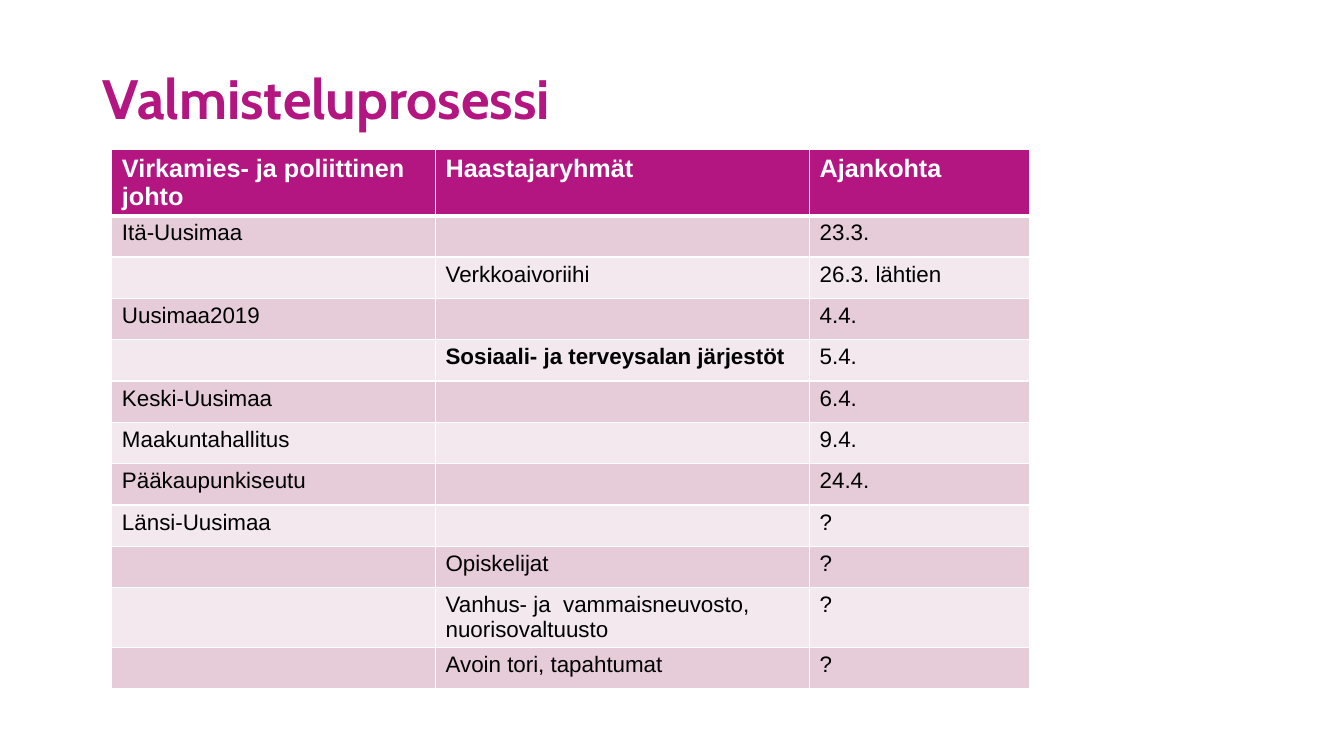
import pptx
import pptx.util
import pptx.dml.color
import pptx.enum.text
import pptx.oxml
import pptx.oxml.ns

SLIDE_SIZE = (13.33, 7.5)
TITLE = "Valmisteluprosessi"
TITLE_BOX = (0.92, 0.63, 10.5, 0.76)
HEADER = ("Virkamies- ja poliittinen johto", "Haastajaryhmät", "Ajankohta")
SCHEDULE = [
    ("Itä-Uusimaa", "", "23.3."),
    ("", "Verkkoaivoriihi", "26.3. lähtien"),
    ("Uusimaa2019", "", "4.4."),
    ("", "Sosiaali- ja terveysalan järjestöt", "5.4."),
    ("Keski-Uusimaa", "", "6.4."),
    ("Maakuntahallitus", "", "9.4."),
    ("Pääkaupunkiseutu", "", "24.4."),
    ("Länsi-Uusimaa", "", "?"),
    ("", "Opiskelijat", "?"),
    ("", "Vanhus- ja  vammaisneuvosto, nuorisovaltuusto", "?"),
    ("", "Avoin tori, tapahtumat", "?"),
]
BOLD_TEXTS = {"Sosiaali- ja terveysalan järjestöt"}
TABLE_LEFT, TABLE_TOP = 1.11, 1.48
COLUMN_WIDTHS = (3.21, 3.71, 2.18)
ROW_HEIGHT = 0.41

MAGENTA, WHITE, BLACK = "B31681", "FFFFFF", "000000"
BANDS = ("E5CCD8", "F2E8ED")
TITLE_FONT = {"name": "Cabin", "size": pptx.util.Pt(39.6), "bold": True}
HEADER_FONT = {"name": "Arial", "size": pptx.util.Pt(18), "bold": True}
BODY_FONT = {"name": "Arial", "size": pptx.util.Pt(16), "bold": False}


def color(hex_string):
    return pptx.dml.color.RGBColor.from_string(hex_string)


def format_font(font, values, hex_string):
    for name, value in values.items():
        setattr(font, name, value)
    font.color.rgb = color(hex_string)


def add_borders(cell, bottom_width, top_width):
    """Draw white lines, with widths in points, on all four sides of a cell."""
    properties = cell._tc.get_or_add_tcPr()
    for side, width in (("L", 1), ("R", 1), ("T", top_width), ("B", bottom_width)):
        properties.append(pptx.oxml.parse_xml(
            f'<a:ln{side} {pptx.oxml.ns.nsdecls("a")} w="{pptx.util.Pt(width)}">'
            f'<a:solidFill><a:srgbClr val="{WHITE}"/></a:solidFill></a:ln{side}>'))


def add_title(slide):
    title = slide.shapes.title
    for name, value in zip(("left", "top", "width", "height"), TITLE_BOX):
        setattr(title, name, pptx.util.Inches(value))
    frame = title.text_frame
    frame.text = TITLE
    frame.auto_size = pptx.enum.text.MSO_AUTO_SIZE.NONE
    frame.vertical_anchor = pptx.enum.text.MSO_ANCHOR.MIDDLE
    paragraph = frame.paragraphs[0]
    paragraph.alignment = pptx.enum.text.PP_ALIGN.LEFT
    paragraph.line_spacing = 0.9
    format_font(paragraph.runs[0].font, TITLE_FONT, MAGENTA)


def add_schedule(slide):
    rows = [HEADER, *SCHEDULE]
    box = (TABLE_LEFT, TABLE_TOP, sum(COLUMN_WIDTHS), ROW_HEIGHT * len(rows))
    table = slide.shapes.add_table(
        len(rows), len(HEADER), *map(pptx.util.Inches, box)).table
    for column, width in zip(table.columns, COLUMN_WIDTHS):
        column.width = pptx.util.Inches(width)
    for row_index, texts in enumerate(rows):
        table.rows[row_index].height = pptx.util.Inches(ROW_HEIGHT)
        is_header = row_index == 0
        fill = MAGENTA if is_header else BANDS[(row_index - 1) % 2]
        for column_index, text in enumerate(texts):
            cell = table.cell(row_index, column_index)
            add_borders(cell, 3 if is_header else 1, 3 if row_index == 1 else 1)
            cell.fill.solid()
            cell.fill.fore_color.rgb = color(fill)
            if text:
                cell.text = text
                font = cell.text_frame.paragraphs[0].runs[0].font
                format_font(font, HEADER_FONT if is_header else BODY_FONT,
                            WHITE if is_header else BLACK)
                font.bold = is_header or text in BOLD_TEXTS


def main():
    presentation = pptx.Presentation()
    presentation.slide_width, presentation.slide_height = map(
        pptx.util.Inches, SLIDE_SIZE)
    slide = presentation.slides.add_slide(presentation.slide_layouts[5])
    add_title(slide)
    add_schedule(slide)
    presentation.save("out.pptx")


if __name__ == "__main__":
    main()
